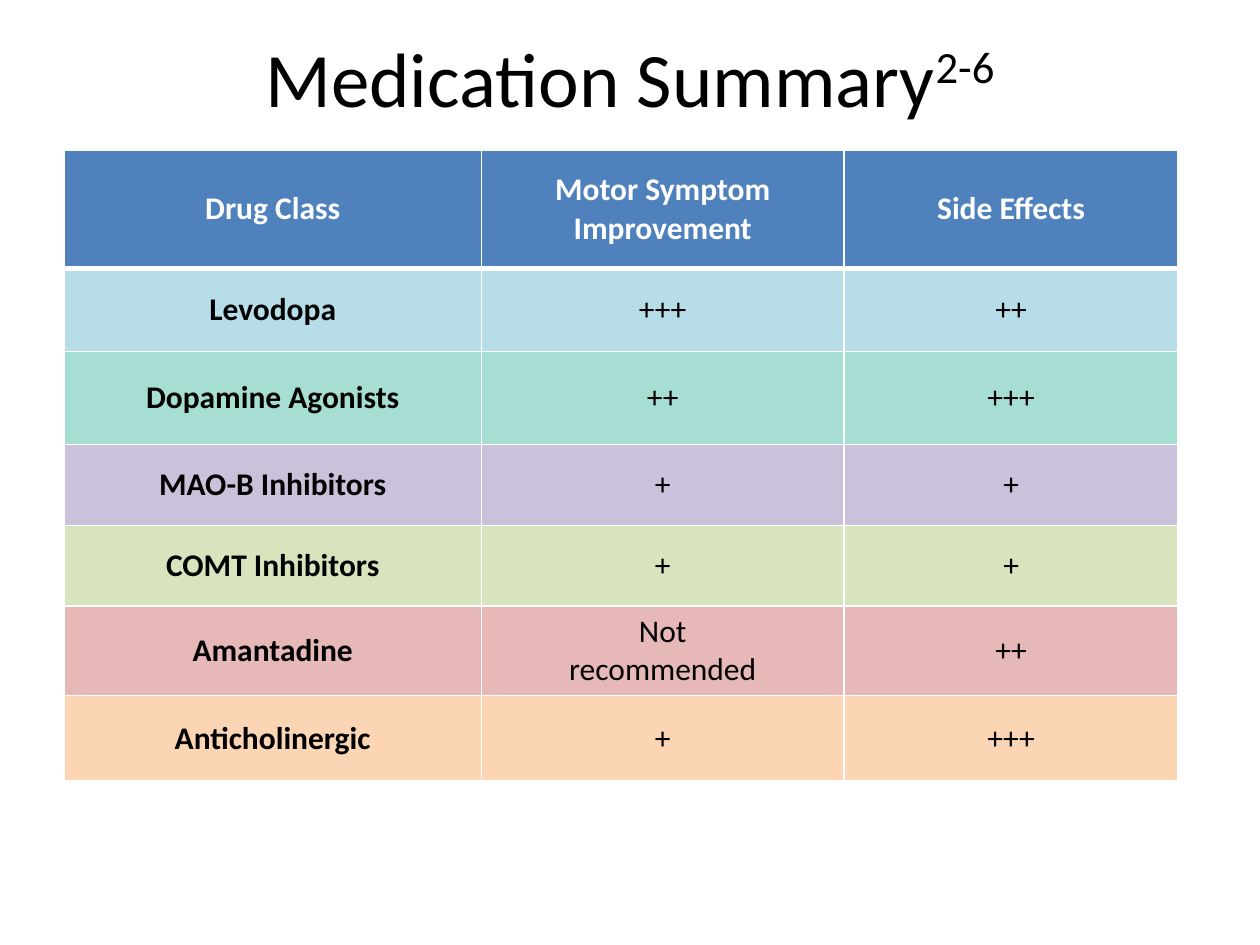
from dataclasses import dataclass

from lxml.etree import SubElement
from pptx import Presentation
from pptx.dml.color import RGBColor
from pptx.enum.text import MSO_ANCHOR, PP_ALIGN
from pptx.oxml.ns import qn
from pptx.util import Inches, Pt

TITLE, CITATION = "Medication Summary", "2-6"
HEADER = ("Drug Class", "Motor Symptom Improvement", "Side Effects")
# Drug class, motor improvement, side effects, row colour, row height
DRUGS = [
    ("Levodopa", "+++", "++", "B7DEE8", 0.66),
    ("Dopamine Agonists", "++", "+++", "A6DED3", 0.74),
    ("MAO-B Inhibitors", "+", "+", "CCC1DA", 0.64),
    ("COMT Inhibitors", "+", "+", "D7E4BD", 0.64),
    ("Amantadine", "Not\nrecommended", "++", "E6B9B8", 0.67),
    ("Anticholinergic", "+", "+++", "FCD5B5", 0.68),
]
COLUMN_WIDTHS = (3.31, 2.88, 2.65)
HEADER_HEIGHT = 0.94
TABLE_LEFT, TABLE_TOP = 0.51, 1.19


@dataclass(frozen=True)
class Theme:
    font: str = "Calibri"
    text: str = "000000"
    light: str = "FFFFFF"
    header: str = "4F81BD"
    title_size: int = 44
    table_size: int = 18
    border: int = 1
    header_rule: int = 3


THEME = Theme()


def add_text(paragraph, text, size=THEME.table_size, color=THEME.text,
             bold=False, baseline=None):
    paragraph.alignment = PP_ALIGN.CENTER
    run = paragraph.add_run()
    run.text = text
    run.font.name = THEME.font
    run.font.size = Pt(size)
    run.font.bold = bold
    run.font.color.rgb = RGBColor.from_string(color)
    if baseline:
        run.font._element.set("baseline", str(baseline * 1000))


def set_borders(cell, **widths):
    """Draw the four cell edges; widths maps L, R, T or B to points."""
    properties = cell._tc.get_or_add_tcPr()
    for side in "LRTB":
        width = Pt(widths.get(side, THEME.border))
        line = SubElement(properties, qn(f"a:ln{side}"), w=str(width))
        fill = SubElement(line, qn("a:solidFill"))
        SubElement(fill, qn("a:srgbClr"), val=THEME.light)


def fill_row(table, index, texts, fill, borders, bold_columns, color):
    for column, text in enumerate(texts):
        cell = table.cell(index, column)
        set_borders(cell, **borders)
        cell.fill.solid()
        cell.fill.fore_color.rgb = RGBColor.from_string(fill)
        cell.vertical_anchor = MSO_ANCHOR.MIDDLE
        frame = cell.text_frame
        for number, line in enumerate(text.split("\n")):
            paragraph = frame.add_paragraph() if number else frame.paragraphs[0]
            add_text(paragraph, line, color=color, bold=column in bold_columns)


def add_title(slide):
    title = slide.shapes.title
    title.left, title.top = Inches(0.5), Inches(-0.02)
    title.width, title.height = Inches(9), Inches(1.25)
    title.text_frame.vertical_anchor = MSO_ANCHOR.MIDDLE
    paragraph = title.text_frame.paragraphs[0]
    add_text(paragraph, TITLE, size=THEME.title_size)
    add_text(paragraph, CITATION, size=THEME.title_size, baseline=30)


def add_drug_table(slide):
    heights = [HEADER_HEIGHT] + [drug[-1] for drug in DRUGS]
    table = slide.shapes.add_table(
        len(heights), len(COLUMN_WIDTHS), Inches(TABLE_LEFT), Inches(TABLE_TOP),
        Inches(sum(COLUMN_WIDTHS)), Inches(sum(heights))).table
    for column, width in zip(table.columns, COLUMN_WIDTHS):
        column.width = Inches(width)
    for row, height in zip(table.rows, heights):
        row.height = Inches(height)

    fill_row(table, 0, HEADER, THEME.header, {"B": THEME.header_rule},
             bold_columns=(0, 1, 2), color=THEME.light)
    for index, (*texts, fill, _) in enumerate(DRUGS, start=1):
        borders = {"T": THEME.header_rule} if index == 1 else {}
        fill_row(table, index, texts, fill, borders,
                 bold_columns=(0,), color=THEME.text)


def main():
    presentation = Presentation()
    presentation.slide_width, presentation.slide_height = Inches(10), Inches(7.5)
    slide = presentation.slides.add_slide(
        presentation.slide_layouts.get_by_name("Title Only"))
    add_title(slide)
    add_drug_table(slide)
    presentation.save("out.pptx")


if __name__ == "__main__":
    main()
